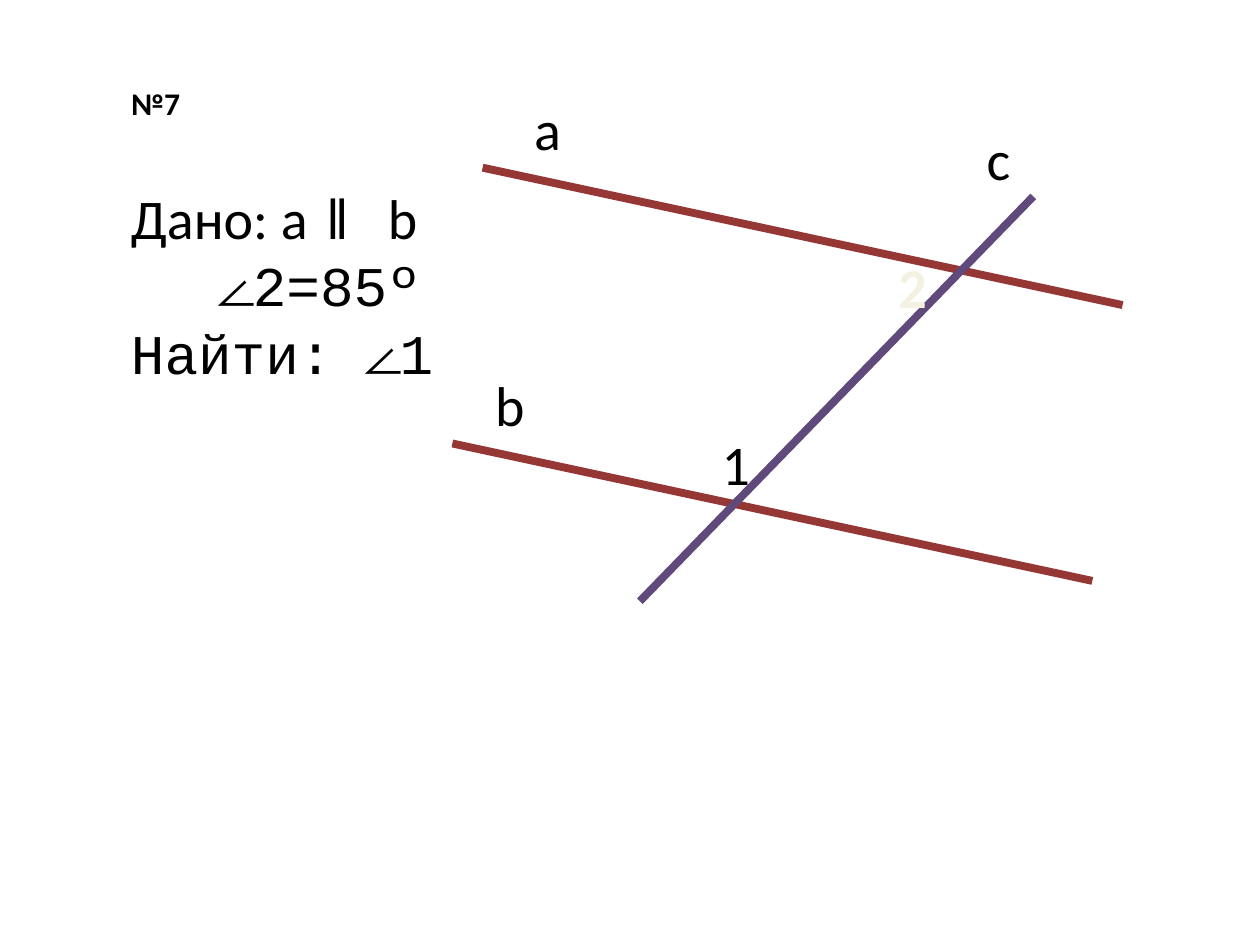
from lxml import etree
from pptx import Presentation
from pptx import util as u
from pptx.dml.color import RGBColor
from pptx.enum import shapes, text
from pptx.oxml import ns

COLORS = {
    "text": "000000",
    "parallel": "953735",
    "transversal": "604A7B",
    "given_angle": "F4F1E3",
    "outline": "054697",
}
BODY, MONO = "Calibri", "Courier New"


def add_run(paragraph, content, size=32, font=BODY, color="text", bold=False):
    run = paragraph.add_run()
    run.text = content
    run.font.size = u.Pt(size)
    run.font.name = font
    run.font.bold = bold
    run.font.color.rgb = RGBColor.from_string(COLORS[color])
    return run


def prepare_frame(shape):
    frame = shape.text_frame
    frame.word_wrap = True
    frame.auto_size = text.MSO_AUTO_SIZE.NONE
    frame.vertical_anchor = text.MSO_ANCHOR.TOP
    frame.paragraphs[0].alignment = text.PP_ALIGN.LEFT
    return frame


def add_text_box(slide, left, top, width, height):
    box = slide.shapes.add_textbox(u.Cm(left), u.Cm(top), u.Cm(width), u.Cm(height))
    return prepare_frame(box)


def outline_run(run, color):
    properties = run.font._element
    line = etree.Element(ns.qn("a:ln"), w=str(u.Pt(1)))
    fill = etree.SubElement(line, ns.qn("a:solidFill"))
    etree.SubElement(fill, ns.qn("a:srgbClr"), val=COLORS[color])
    properties.insert(0, line)


def add_line(slide, start, end, color):
    points = [u.Cm(value) for value in (*start, *end)]
    line = slide.shapes.add_connector(shapes.MSO_CONNECTOR.STRAIGHT, *points)
    line.line.color.rgb = RGBColor.from_string(COLORS[color])
    line.line.width = u.Pt(4.5)
    etree.SubElement(line._element.spPr, ns.qn("a:effectLst"))


def set_title(slide, left, top, width, height):
    title = slide.shapes.title
    title.left, title.top = u.Cm(left), u.Cm(top)
    title.width, title.height = u.Cm(width), u.Cm(height)
    add_run(prepare_frame(title).paragraphs[0], "№7", size=18, bold=True)


def add_diagram(slide, left, top):
    # Two parallel lines of the same slope, then the line that crosses them
    run_x, run_y = 12.9, 2.77
    for x, y in ((0.61, 1.6), (0, 7.16)):
        start = (left + x, top + y)
        add_line(slide, start, (start[0] + run_x, start[1] + run_y), "parallel")
    add_line(slide, (left + 11.71, top + 2.18), (left + 3.78, top + 10.34), "transversal")

    # Names of lines and angles
    labels = (
        ("а", 1.4, 0, 1.19),
        ("b", 0.61, 5.56, 1.22),
        ("c", 10.52, 0.61, 1.12),
        ("2", 8.74, 3.18, 1.32),
        ("1", 5.18, 6.76, 1.24),
    )
    for name, x, y, width in labels:
        paragraph = add_text_box(slide, left + x, top + y, width, 1.63).paragraphs[0]
        if name == "2":
            run = add_run(paragraph, name, color="given_angle", bold=True)
            outline_run(run, "outline")
        else:
            add_run(paragraph, name)


def add_problem(slide, left, top, width, height):
    frame = add_text_box(slide, left, top, width, height)
    rows = (
        (0, (("Дано: а ", BODY), ("ǁ ", MONO), ("b", BODY))),
        (1.78, (("∠2=85º", MONO),)),
        (0, (("Найти: ∠1", MONO),)),
    )
    for index, (indent, runs) in enumerate(rows):
        paragraph = frame.add_paragraph() if index else frame.paragraphs[0]
        if indent:
            paragraph._p.get_or_add_pPr().set("marL", str(u.Cm(indent)))
        for content, font in runs:
            add_run(paragraph, content, font=font)


def main():
    presentation = Presentation()
    presentation.slide_width, presentation.slide_height = u.Cm(25.4), u.Cm(19.05)
    slide = presentation.slides.add_slide(presentation.slide_layouts[5])
    set_title(slide, 2.39, 1.57, 1.8, 1.02)
    add_diagram(slide, 9.12, 1.78)
    add_problem(slide, 2.39, 3.58, 7.77, 4.37)
    presentation.save("out.pptx")


if __name__ == "__main__":
    main()
